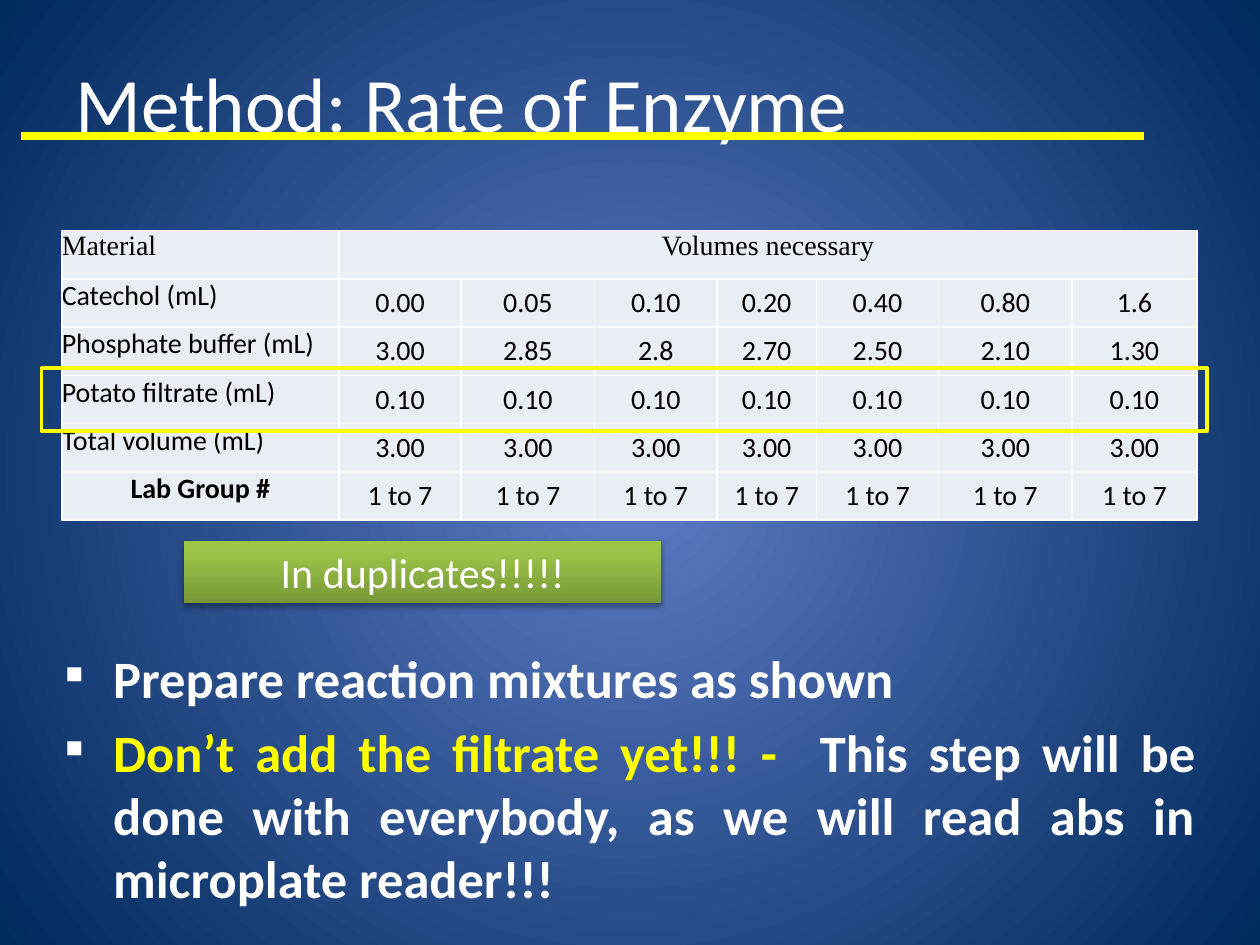
from lxml import etree
from pptx import Presentation
from pptx.dml.color import RGBColor
from pptx.enum.shapes import MSO_CONNECTOR, MSO_SHAPE
from pptx.enum.text import MSO_ANCHOR, PP_ALIGN
from pptx.oxml.ns import qn
from pptx.util import Inches, Pt

RECTANGLE = MSO_SHAPE.RECTANGLE
STRAIGHT = MSO_CONNECTOR.STRAIGHT
TOP, MIDDLE = MSO_ANCHOR.TOP, MSO_ANCHOR.MIDDLE
LEFT, CENTER, JUSTIFY = PP_ALIGN.LEFT, PP_ALIGN.CENTER, PP_ALIGN.JUSTIFY

COLORS = {
    "white": "FFFFFF", "black": "000000", "yellow": "FFFF00", "cell": "E9EDF4",
    "glow": "5E7CC5", "navy": "00295C",
    "green_dark": "779737", "green": "9BC348", "green_light": "9DC746",
}

COLUMN_WIDTHS = [2.2, 0.97, 1.06, 0.97, 0.79, 0.97, 1.06, 0.99]
HEADERS = ["Material", "Volumes necessary"]
MIXTURES = [
    ["Catechol (mL)", "0.00", "0.05", "0.10", "0.20", "0.40", "0.80", "1.6"],
    ["Phosphate buffer (mL)", "3.00", "2.85", "2.8", "2.70", "2.50", "2.10", "1.30"],
    ["Potato filtrate (mL)"] + ["0.10"] * 7,
    ["Total volume (mL)"] + ["3.00"] * 7,
    ["Lab Group #"] + ["1 to 7"] * 7,
]
STEPS = [
    [("Prepare reaction mixtures as shown", "white")],
    [("Don’t add the filtrate yet!!! - ", "yellow"),
     (" This step will be done with everybody, as we will read abs in "
      "microplate reader!!!", "white")],
]


def rgb(name):
    return RGBColor.from_string(COLORS[name])


def add_element(parent, tag, **attributes):
    values = {key: str(value) for key, value in attributes.items()}
    return etree.SubElement(parent, qn(tag), values)


def add_color(parent, name):
    return add_element(parent, "a:srgbClr", val=COLORS[name])


def add_run(paragraph, text, color, size, font="Calibri", bold=False):
    run = paragraph.add_run()
    run.text = text
    for name, value in {"size": Pt(size), "name": font, "bold": bold}.items():
        setattr(run.font, name, value)
    run.font.color.rgb = rgb(color)


def set_gradient(fill, owner, stops):
    """Give the fill inside owner these stops and return its gradient element."""
    fill.gradient()
    gradient = next(owner.iter(qn("a:gradFill")))
    for child in list(gradient):
        gradient.remove(child)
    stop_list = add_element(gradient, "a:gsLst")
    for percent, color in stops:
        add_color(add_element(stop_list, "a:gs", pos=percent * 1000), color)
    return gradient


def paint_background(slide):
    stops = [(0, "glow"), (100, "navy")]
    gradient = set_gradient(slide.background.fill, slide.element, stops)
    circle = add_element(gradient, "a:path", path="circle")
    add_element(circle, "a:fillToRect", l=50000, t=50000, r=50000, b=50000)


def add_text_frame(slide, box, anchor=TOP):
    frame = slide.shapes.add_textbox(*map(Inches, box)).text_frame
    frame.word_wrap = True
    frame.vertical_anchor = anchor
    return frame


def add_title(slide, box):
    left, top, width, height = box
    frame = add_text_frame(slide, box, MIDDLE)
    add_run(frame.paragraphs[0], "Method: Rate of Enzyme", "white", 44)
    rule_top = Inches(top + 0.9)
    rule = slide.shapes.add_connector(
        STRAIGHT, Inches(left - 0.33), rule_top, Inches(left + 8.58), rule_top)
    rule.line.color.rgb = rgb("yellow")
    rule.line.width = Pt(4.5)
    add_element(rule.element.spPr, "a:effectLst")


def format_cell(cell, text, alignment, anchor, font="Calibri", bold=False):
    properties = cell._tc.get_or_add_tcPr()
    for edge in ("a:lnL", "a:lnR", "a:lnT", "a:lnB"):
        border = add_element(properties, edge, w=Pt(1))
        add_color(add_element(border, "a:solidFill"), "white")
    cell.fill.solid()
    cell.fill.fore_color.rgb = rgb("cell")
    margins = dict.fromkeys(
        ("margin_left", "margin_right", "margin_top", "margin_bottom"), 0)
    for name, value in {**margins, "vertical_anchor": anchor}.items():
        setattr(cell, name, value)
    paragraph = cell.text_frame.paragraphs[0]
    paragraph.alignment = alignment
    add_run(paragraph, text, "black", 16, font, bold)


def add_volume_table(slide, box):
    row_count = len(MIXTURES) + 1
    table = slide.shapes.add_table(
        row_count, len(COLUMN_WIDTHS), *map(Inches, box)).table
    table.first_row = table.horz_banding = False
    for column, width in zip(table.columns, COLUMN_WIDTHS):
        column.width = Inches(width)
    for row in table.rows:
        row.height = Inches(box[3] / row_count)

    table.cell(0, 1).merge(table.cell(0, len(COLUMN_WIDTHS) - 1))
    for index, (text, alignment) in enumerate(zip(HEADERS, (LEFT, CENTER))):
        format_cell(table.cell(0, index), text, alignment, TOP, "Times New Roman")
    for row_index, (label, *volumes) in enumerate(MIXTURES, start=1):
        is_group = row_index == len(MIXTURES)
        format_cell(table.cell(row_index, 0), label,
                    CENTER if is_group else LEFT, TOP, bold=is_group)
        for column_index, volume in enumerate(volumes, start=1):
            format_cell(table.cell(row_index, column_index), volume, CENTER, MIDDLE)


def add_duplicates_banner(slide, box):
    banner = slide.shapes.add_shape(RECTANGLE, *map(Inches, box))
    properties = banner.element.spPr
    stops = [(0, "green_dark"), (80, "green"), (100, "green_light")]
    gradient = set_gradient(banner.fill, properties, stops)
    add_element(gradient, "a:lin", ang=270 * 60000, scaled=0)
    banner.line.fill.background()
    banner.shadow.inherit = False
    shadow = add_element(
        properties.find(qn("a:effectLst")), "a:outerShdw", blurRad=Pt(3.1),
        dist=Pt(1.8), dir=90 * 60000, rotWithShape=0)
    add_element(add_color(shadow, "black"), "a:alpha", val=35000)
    paragraph = banner.text_frame.paragraphs[0]
    paragraph.alignment = CENTER
    add_run(paragraph, "In duplicates!!!!!", "white", 24)


def add_steps(slide, box):
    frame = add_text_frame(slide, box)
    for index, step in enumerate(STEPS):
        paragraph = frame.add_paragraph() if index else frame.paragraphs[0]
        paragraph.alignment = JUSTIFY
        paragraph.space_before = Pt(6)
        properties = paragraph._p.get_or_add_pPr()
        properties.set("marL", str(Inches(0.38)))
        properties.set("indent", str(Inches(-0.38)))
        add_color(add_element(properties, "a:buClr"), "white")
        add_element(properties, "a:buSzPct", val=46000)
        add_element(properties, "a:buChar", char="■")
        for text, color in step:
            add_run(paragraph, text, color, 30, bold=True)


def add_filtrate_frame(slide, box):
    frame = slide.shapes.add_shape(RECTANGLE, *map(Inches, box))
    frame.fill.background()
    frame.line.color.rgb = rgb("yellow")
    frame.line.width = Pt(2)
    frame.shadow.inherit = False


def main():
    presentation = Presentation()
    presentation.slide_width = Inches(10)
    presentation.slide_height = Inches(7.5)
    slide = presentation.slides.add_slide(presentation.slide_layouts[6])
    paint_background(slide)
    add_title(slide, (0.5, 0.18, 9, 1.25))
    add_volume_table(slide, (0.49, 1.83, 9, 2.3))
    add_duplicates_banner(slide, (1.46, 4.29, 3.79, 0.5))
    add_steps(slide, (0.42, 5.08, 9.17, 2.22))
    add_filtrate_frame(slide, (0.33, 2.92, 9.25, 0.5))
    presentation.save("out.pptx")


if __name__ == "__main__":
    main()
